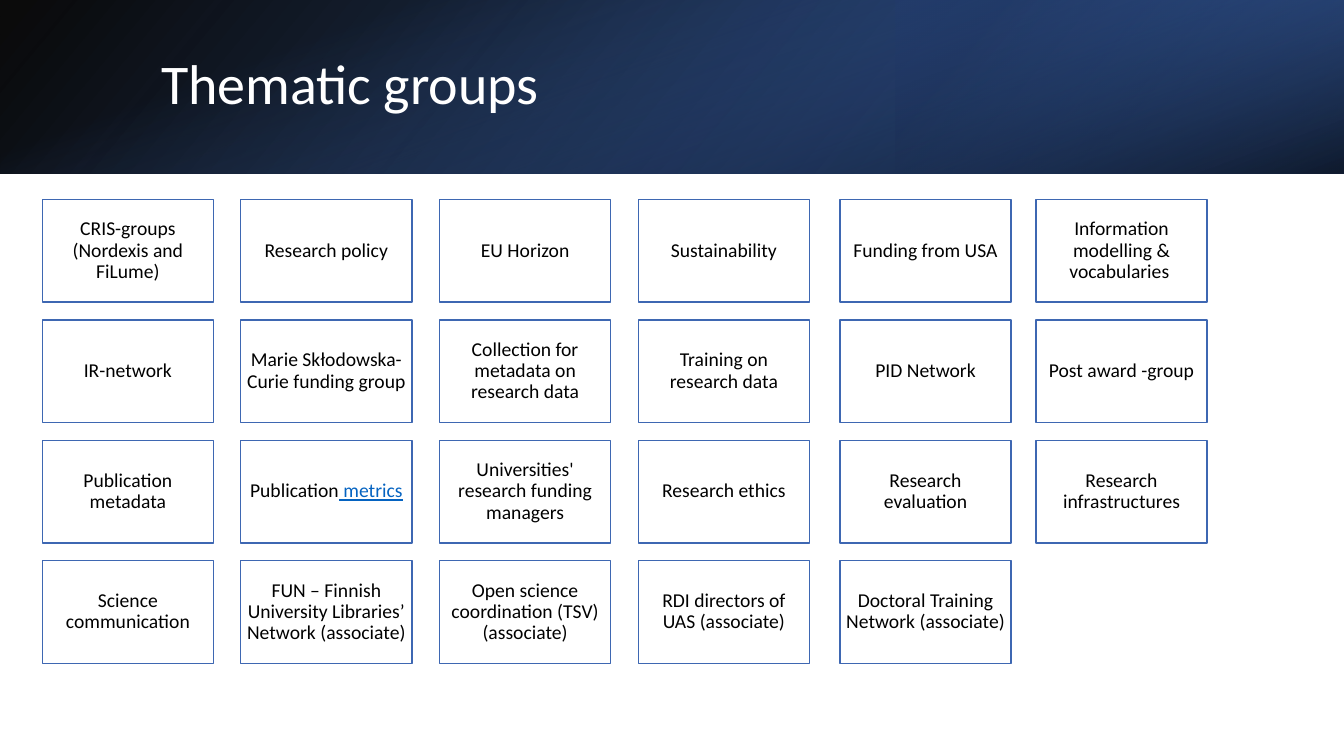
from lxml.etree import SubElement
from pptx import Presentation
from pptx.dml.color import RGBColor
from pptx.enum.shapes import MSO_SHAPE as Shape
from pptx.enum.text import MSO_ANCHOR as Anchor, PP_ALIGN as Align
from pptx.oxml.ns import qn
from pptx.util import Pt

TITLE = "Thematic groups"
LINK_TEXT = " metrics"
GROUPS = [
    ["CRIS-groups (Nordexis and FiLume)", "Research policy", "EU Horizon",
     "Sustainability", "Funding from USA", "Information modelling & vocabularies "],
    ["IR-network", "Marie Skłodowska-Curie funding group",
     "Collection for metadata on research data", "Training on research data",
     "PID Network", "Post award -group"],
    ["Publication metadata", "Publication" + LINK_TEXT,
     "Universities' research funding managers", "Research ethics",
     "Research evaluation", "Research infrastructures"],
    ["Science communication",
     "FUN – Finnish University Libraries’ Network (associate)",
     "Open science coordination (TSV) (associate)",
     "RDI directors of UAS (associate)", "Doctoral Training Network (associate)"],
]

WHITE = RGBColor(0xFF, 0xFF, 0xFF)
BLACK = RGBColor(0x00, 0x00, 0x00)
BORDER = RGBColor(0x3E, 0x67, 0xB2)
LINK = RGBColor(0x05, 0x63, 0xC1)
DEEP_BLUE = RGBColor(0x2F, 0x55, 0x97)
NAVY = RGBColor(0x20, 0x38, 0x64)
BLUE = RGBColor(0x44, 0x72, 0xC4)

WIDTH, HEIGHT, BAND = 960, 540, 124
COLUMNS = (30.25, 172, 314, 456, 600, 740)
FIRST_ROW, ROW_STEP = 142.5, 86
CELL_WIDTH, CELL_HEIGHT, INSET = 122.3, 73.3, 4.3

# left, top, width, height, rotation, flipped, gradient angle, (position, colour, opacity)
BAND_LAYERS = [
    (0, 0, WIDTH, BAND, 0, True, 140, [(0, BLACK, 96), (100, DEEP_BLUE, 100)]),
    (WIDTH * 2 / 3, 0, WIDTH / 3, BAND, 180, True, 320, [(19, NAVY, 68), (100, BLUE, 79)]),
    ((WIDTH - BAND) / 2, (BAND - WIDTH) / 2, BAND, WIDTH, 90, False, 340,
     [(23, BLUE, 0), (99, BLACK, 74)]),
]


def add_rectangle(page, left, top, width, height):
    box = page.shapes.add_shape(Shape.RECTANGLE, Pt(left), Pt(top), Pt(width), Pt(height))
    box.shadow.inherit = False
    return box


def fill_gradient(box, angle, stops):
    """Fill with a linear gradient whose stops have their own opacity (percent)."""
    box.fill.gradient()
    gradient = box.element.spPr.find(qn("a:gradFill"))
    for child in list(gradient):
        gradient.remove(child)
    stop_list = SubElement(gradient, qn("a:gsLst"))
    for position, color, opacity in stops:
        stop = SubElement(stop_list, qn("a:gs"), pos=str(position * 1000))
        tint = SubElement(stop, qn("a:srgbClr"), val=str(color))
        SubElement(tint, qn("a:alpha"), val=str(opacity * 1000))
    SubElement(gradient, qn("a:lin"), ang=str(angle * 60000), scaled="0")


def add_band(page):
    for left, top, width, height, rotation, flipped, angle, stops in BAND_LAYERS:
        layer = add_rectangle(page, left, top, width, height)
        layer.rotation = rotation
        if flipped:
            layer.element.spPr.find(qn("a:xfrm")).set("flipH", "1")
        layer.line.fill.background()
        fill_gradient(layer, angle, stops)


def write(box, pieces, size, color, align):
    """Put the pieces of one paragraph into the box, one run each."""
    frame = box.text_frame
    frame.word_wrap = True
    frame.vertical_anchor = Anchor.MIDDLE
    para = frame.paragraphs[0]
    para.alignment = align
    para.line_spacing = 0.9
    for piece in pieces:
        span = para.add_run()
        span.text = piece
        span.font.name = "Calibri"
        span.font.size = Pt(size)
        span.font.color.rgb = color
        if piece == LINK_TEXT:
            span.font.color.rgb = LINK
            span.font.underline = True


def add_group(page, left, top, name):
    box = add_rectangle(page, left, top, CELL_WIDTH, CELL_HEIGHT)
    box.fill.solid()
    box.fill.fore_color.rgb = WHITE
    box.line.color.rgb = BORDER
    box.line.width = Pt(1)
    frame = box.text_frame
    frame.margin_left = frame.margin_right = Pt(INSET)
    frame.margin_top = frame.margin_bottom = Pt(INSET)
    pieces = [name]
    if name.endswith(LINK_TEXT):
        pieces = [name.removesuffix(LINK_TEXT), LINK_TEXT]
    write(box, pieces, 14, BLACK, Align.CENTER)


def main():
    deck = Presentation()
    deck.slide_width, deck.slide_height = Pt(WIDTH), Pt(HEIGHT)
    page = deck.slides.add_slide(deck.slide_layouts[6])
    add_band(page)
    title = page.shapes.add_textbox(Pt(108), Pt(27.4), Pt(790.5), Pt(69))
    write(title, [TITLE], 40, WHITE, Align.LEFT)
    for row, names in enumerate(GROUPS):
        for left, name in zip(COLUMNS, names):
            add_group(page, left, FIRST_ROW + row * ROW_STEP, name)
    deck.save("out.pptx")


if __name__ == "__main__":
    main()
